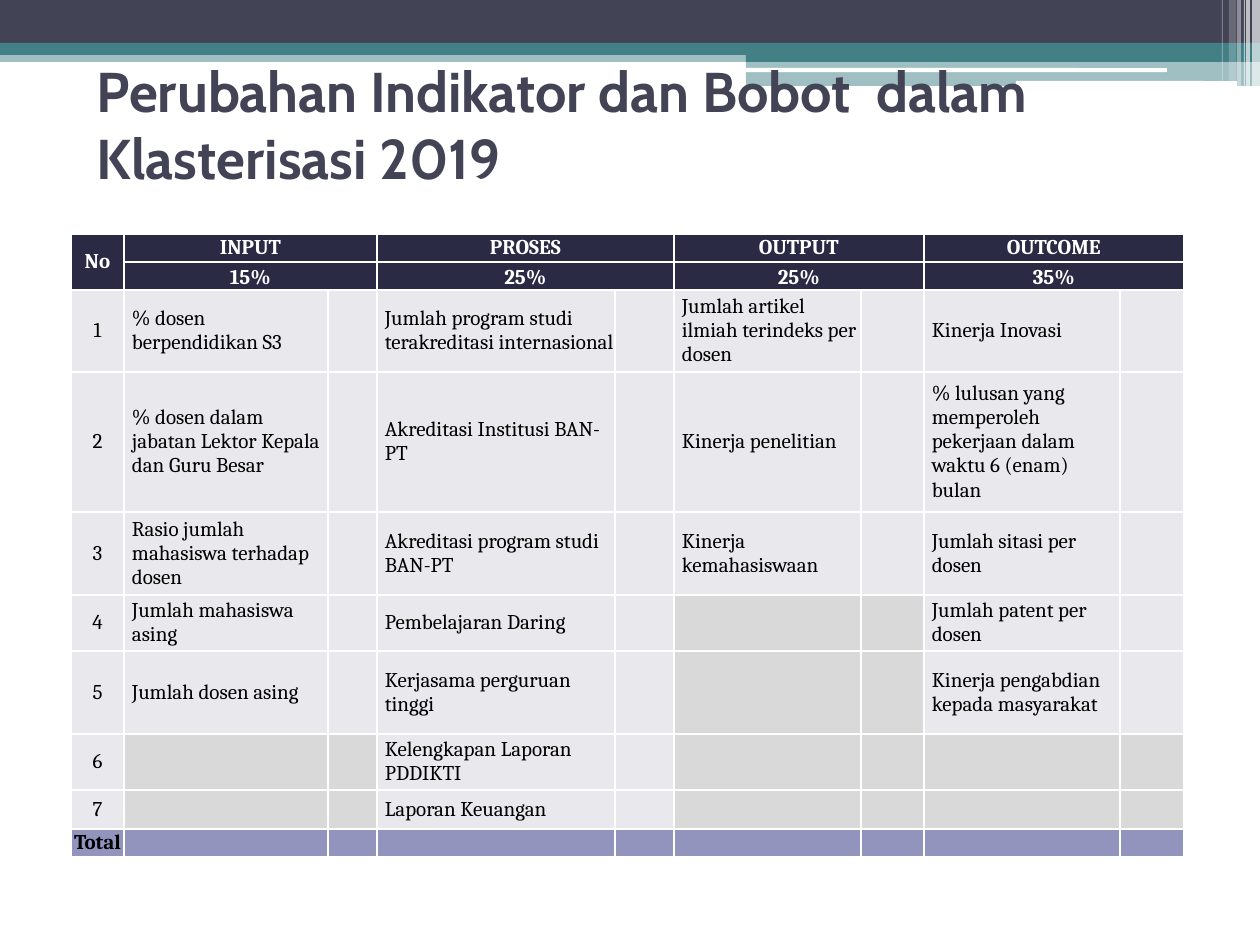
from lxml.etree import SubElement
from pptx import Presentation
from pptx.dml.color import RGBColor
from pptx.enum.shapes import MSO_SHAPE
from pptx.enum.text import MSO_ANCHOR, PP_ALIGN
from pptx.oxml import parse_xml
from pptx.oxml.ns import nsdecls, qn
from pptx.util import Pt

PX = 914400 / 126
WHITE = RGBColor(0xFF, 0xFF, 0xFF)
BLACK = RGBColor(0x00, 0x00, 0x00)
SLATE = RGBColor(0x42, 0x44, 0x56)
TEAL = RGBColor(0x43, 0x80, 0x86)
NAVY = RGBColor(0x2A, 0x2A, 0x45)
PALE = RGBColor(0xE9, 0xE9, 0xED)
GREY = RGBColor(0xD9, 0xD9, 0xD9)
LILAC = RGBColor(0x93, 0x94, 0xBE)

BARS = [
    (0, 50, 1260, 12, TEAL, 50),
    (0, 0, 1260, 43, SLATE, 100),
    (0, 43, 1260, 12, TEAL, 100),
    (746, 49, 514, 13, TEAL, 100),
    (746, 61, 514, 25, TEAL, 50),
]
LINES = [(745, 68, 422, 4), (1016, 81, 221, 5)]
STRIPES = [(1252, 8, 86, 65), (1246, 4, 86, 65), (1244, 1, 86, 60),
           (1237, 4, 86, 40), (1229, 7, 81, 20), (1222, 1, 81, 30)]

COLS = [53, 204, 49, 238, 59, 187, 63, 196, 64]
ROWS = [28, 28, 82, 140, 83, 56, 83, 56, 39, 28]
GROUPS = [
    ("INPUT", "15%", [
        "% dosen berpendidikan S3",
        "% dosen dalam jabatan Lektor Kepala dan Guru Besar",
        "Rasio jumlah mahasiswa terhadap dosen",
        "Jumlah mahasiswa asing",
        "Jumlah dosen asing"]),
    ("PROSES", "25%", [
        "Jumlah program studi terakreditasi internasional",
        "Akreditasi Institusi BAN-PT",
        "Akreditasi program studi BAN-PT",
        "Pembelajaran Daring",
        "Kerjasama perguruan tinggi",
        "Kelengkapan Laporan PDDIKTI",
        "Laporan Keuangan"]),
    ("OUTPUT", "25%", [
        "Jumlah artikel ilmiah terindeks per dosen",
        "Kinerja penelitian",
        "Kinerja kemahasiswaan"]),
    ("OUTCOME", "35%", [
        "Kinerja Inovasi",
        "% lulusan yang memperoleh pekerjaan dalam waktu 6 (enam) bulan",
        "Jumlah sitasi per dosen",
        "Jumlah patent per dosen",
        "Kinerja pengabdian kepada masyarakat"]),
]


def px(n):
    return round(n * PX)


class Deck:
    """Holds the fonts and the current slide, and draws each kind of element."""

    title_font = "Cabin"
    body_font = "Cambria"

    def __init__(self):
        self.prs = Presentation()
        self.prs.slide_width, self.prs.slide_height = px(1260), px(945)
        self.s = self.prs.slides.add_slide(self.prs.slide_layouts[6])

    def style(self, p, font, size, color, bold):
        for r in p.runs:
            r.font.name, r.font.size, r.font.bold = font, Pt(size), bold
            r.font.color.rgb = color

    def bar(self, x, y, w, h, color, alpha=100, kind=MSO_SHAPE.RECTANGLE):
        sp = self.s.shapes.add_shape(kind, px(x), px(y), px(w), px(h))
        sp.shadow.inherit = False
        sp.line.fill.background()
        sp.fill.solid()
        sp.fill.fore_color.rgb = color
        if alpha < 100:
            clr = sp.fill._xPr.find(".//" + qn("a:srgbClr"))
            SubElement(clr, qn("a:alpha")).set("val", str(alpha * 1000))

    def title(self, text, x, y, w, h):
        tf = self.s.shapes.add_textbox(px(x), px(y), px(w), px(h)).text_frame
        tf.word_wrap = True
        tf.vertical_anchor = MSO_ANCHOR.MIDDLE
        tf.text = text
        self.style(tf.paragraphs[0], self.title_font, 32, SLATE, True)

    def table(self, x, y, cols, rows):
        frame = self.s.shapes.add_table(len(rows), len(cols), px(x), px(y),
                                        px(sum(cols)), px(sum(rows)))
        tbl = frame.table
        tbl.first_row = tbl.horz_banding = False
        for col, w in zip(tbl.columns, cols):
            col.width = px(w)
        for row, h in zip(tbl.rows, rows):
            row.height = px(h)
        return tbl

    def cell(self, c, text, fill, color=BLACK, bold=False, center=True, anchor=MSO_ANCHOR.MIDDLE):
        c.margin_left = c.margin_right = c.margin_top = c.margin_bottom = 0
        c.vertical_anchor = anchor
        for side in ("lnL", "lnR", "lnT", "lnB"):
            c._tc.get_or_add_tcPr().append(parse_xml(
                f'<a:{side} {nsdecls("a")} w="12700"><a:solidFill>'
                f'<a:srgbClr val="{WHITE}"/></a:solidFill></a:{side}>'))
        c.fill.solid()
        c.fill.fore_color.rgb = fill
        p = c.text_frame.paragraphs[0]
        if not text:
            p._p.get_or_add_endParaRPr().set("sz", "1200")
            return
        p.text = text
        if center:
            p.alignment = PP_ALIGN.CENTER
        else:
            p._p.get_or_add_pPr().set("marL", str(px(8)))
            p._p.get_or_add_pPr().set("indent", "0")
        self.style(p, self.body_font, 12, color, bold)


def fill_table(deck, tbl):
    last = len(ROWS) - 1
    for i in range(2):
        deck.cell(tbl.cell(i, 0), "" if i else "No", NAVY, WHITE, True)
    for i in range(2, last):
        deck.cell(tbl.cell(i, 0), str(i - 1), PALE)
    deck.cell(tbl.cell(last, 0), "Total", LILAC, bold=True)
    tbl.cell(0, 0).merge(tbl.cell(1, 0))

    for g, (name, weight, items) in enumerate(GROUPS):
        left = 1 + 2 * g
        for i, (text, anchor) in enumerate([(name, MSO_ANCHOR.MIDDLE), (weight, MSO_ANCHOR.BOTTOM)]):
            deck.cell(tbl.cell(i, left), text, NAVY, WHITE, True, anchor=anchor)
            deck.cell(tbl.cell(i, left + 1), "", NAVY)
            tbl.cell(i, left).merge(tbl.cell(i, left + 1))
        for i in range(2, last):
            used = i - 2 < len(items)
            fill = PALE if used else GREY
            deck.cell(tbl.cell(i, left), items[i - 2] if used else "", fill, center=False)
            deck.cell(tbl.cell(i, left + 1), "", fill)
        for j in (left, left + 1):
            deck.cell(tbl.cell(last, j), "", LILAC)


def main():
    deck = Deck()
    for bar in BARS:
        deck.bar(*bar)
    for line in LINES:
        deck.bar(*line, WHITE, kind=MSO_SHAPE.ROUNDED_RECTANGLE)
    for x, w, h, alpha in STRIPES:
        deck.bar(x, 0, w, h, WHITE, alpha)
    deck.title("Perubahan Indikator dan Bobot  dalam Klasterisasi 2019", 84, 32, 1086, 183)
    fill_table(deck, deck.table(71, 234, COLS, ROWS))
    deck.prs.save("out.pptx")


if __name__ == "__main__":
    main()
